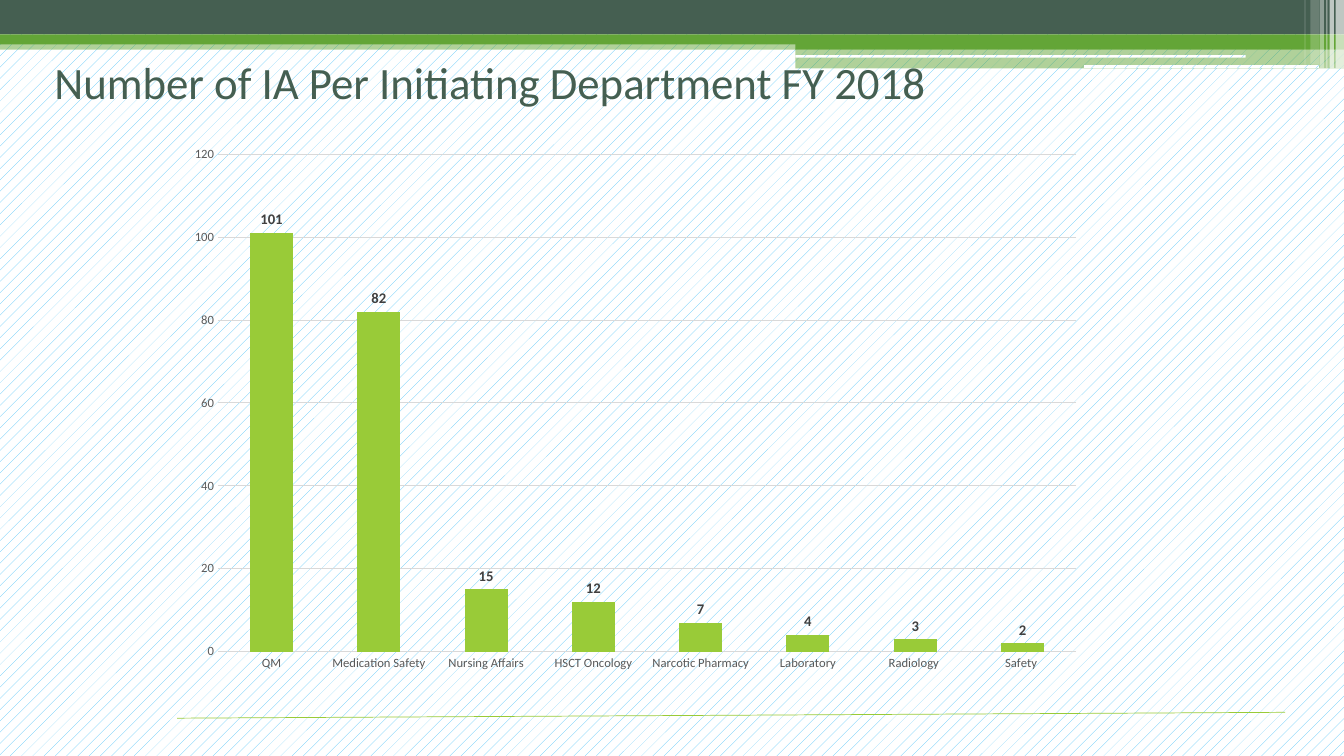
from lxml import etree
from pptx import Presentation
from pptx.chart.data import CategoryChartData
from pptx.dml.color import RGBColor
from pptx.enum.chart import XL_CHART_TYPE, XL_LABEL_POSITION, XL_TICK_MARK
from pptx.enum.dml import MSO_PATTERN
from pptx.enum.shapes import MSO_CONNECTOR, MSO_SHAPE
from pptx.enum.text import MSO_ANCHOR, PP_ALIGN
from pptx.oxml.ns import qn
from pptx.util import Inches, Pt

RECTANGLE = MSO_SHAPE.RECTANGLE
ROUNDED = MSO_SHAPE.ROUNDED_RECTANGLE
STRAIGHT = MSO_CONNECTOR.STRAIGHT
DOTS = MSO_PATTERN.PERCENT_10
COLUMNS = XL_CHART_TYPE.COLUMN_CLUSTERED
ABOVE_BAR = XL_LABEL_POSITION.OUTSIDE_END
NO_TICK = XL_TICK_MARK.NONE
LEFT = PP_ALIGN.LEFT
TOP = MSO_ANCHOR.TOP

GRID_COLUMNS, GRID_ROWS = 160, 90
PINE, GREEN, LIME, SKY, WHITE = "455F51", "63A537", "99CB38", "51C3F9", "FFFFFF"

# left, top, width, height in grid cells, then colour and opacity in percent
BANDS = [
    (0, 4.8, 160, 1.1, GREEN, 50),
    (0, 0, 160, 4.1, PINE, 100),
    (0, 4.1, 160, 1.2, GREEN, 100),
    (94.7, 4.7, 65.3, 1.2, GREEN, 100),
    (94.7, 5.8, 65.3, 2.36, GREEN, 50),
]
NOTCHES = [(94.7, 6.5, 53.6, 0.36), (129, 7.7, 28, 0.45)]
# left, width, height in grid cells, then opacity in percent
STRIPES = [
    (159, 1, 8.16, 65),
    (158.3, 0.5, 8.16, 65),
    (157.9, 0.12, 8.16, 60),
    (157.1, 0.5, 8.16, 40),
    (156, 1, 7.7, 20),
    (155.3, 0.12, 7.7, 30),
]
INITIATIVES = {
    "QM": 101,
    "Medication Safety": 82,
    "Nursing Affairs": 15,
    "HSCT Oncology": 12,
    "Narcotic Pharmacy": 7,
    "Laboratory": 4,
    "Radiology ": 3,
    "Safety ": 2,
}


def colour(value):
    return RGBColor.from_string(value)


class SlideBuilder:
    font_name = "Calibri"

    def __init__(self, deck):
        self.slide = deck.slides.add_slide(deck.slide_layouts[6])
        self.column = deck.slide_width / GRID_COLUMNS
        self.row = deck.slide_height / GRID_ROWS

    def cells(self, left, top, width, height):
        """Turn grid cells into slide lengths."""
        return (round(left * self.column), round(top * self.row),
                round(width * self.column), round(height * self.row))

    def style_font(self, font, hex_colour, **values):
        for name, value in {"name": self.font_name, **values}.items():
            setattr(font, name, value)
        font.color.rgb = colour(hex_colour)

    def dotted_fill(self, fill):
        fill.patterned()
        fill.pattern = DOTS
        fill.fore_color.rgb = colour(SKY)
        fill.back_color.rgb = colour(WHITE)

    def background(self):
        self.dotted_fill(self.slide.background.fill)

    def shape(self, kind, place):
        shape = self.slide.shapes.add_shape(kind, *self.cells(*place))
        shape.shadow.inherit = False
        shape.line.fill.background()
        return shape

    def band(self, place, hex_colour, opacity):
        band = self.shape(RECTANGLE, place)
        band.fill.solid()
        band.fill.fore_color.rgb = colour(hex_colour)
        if opacity < 100:
            solid = band.fill._xPr.find(qn("a:solidFill"))
            etree.SubElement(solid[0], qn("a:alpha"), val=str(opacity * 1000))

    def notch(self, place):
        self.dotted_fill(self.shape(ROUNDED, place).fill)

    def line(self, start, end, hex_colour, points):
        ends = self.cells(*start, *end)
        line = self.slide.shapes.add_connector(STRAIGHT, *ends)
        line.line.color.rgb = colour(hex_colour)
        line.line.width = Pt(points)
        etree.SubElement(line._element.spPr, qn("a:effectLst"))

    def title(self, place, text):
        box = self.slide.shapes.add_textbox(*self.cells(*place))
        frame = box.text_frame
        for name, value in {"word_wrap": True, "vertical_anchor": TOP}.items():
            setattr(frame, name, value)
        para = frame.paragraphs[0]
        para.alignment = LEFT
        span = para.add_run()
        span.text = text
        self.style_font(span.font, PINE, size=Pt(32))

    def column_chart(self, place, values):
        data = CategoryChartData()
        data.categories = list(values)
        data.add_series("Series 1", list(values.values()))
        frame = self.slide.shapes.add_chart(COLUMNS, *self.cells(*place), data)
        chart = frame.chart
        chart.has_title = chart.has_legend = False
        self.style_font(chart.font, "000000", size=Pt(10))
        for axis in (chart.category_axis, chart.value_axis):
            axis.major_tick_mark = axis.minor_tick_mark = NO_TICK
            axis.format.line.fill.background()
            self.style_font(axis.tick_labels.font, "595959", size=Pt(9))
        scale = {"minimum_scale": 0, "maximum_scale": 120, "major_unit": 20}
        for name, value in scale.items():
            setattr(chart.value_axis, name, value)
        grid_line = chart.value_axis.major_gridlines.format.line
        grid_line.color.rgb = colour("D9D9D9")
        grid_line.width = Pt(0.75)
        plot = chart.plots[0]
        plot.vary_by_categories = False
        plot.gap_width = 150
        bars = plot.series[0]
        bars.format.fill.solid()
        bars.format.fill.fore_color.rgb = colour(LIME)
        labels = bars.data_labels
        labels.show_value = True
        labels.position = ABOVE_BAR
        self.style_font(labels.font, "404040", size=Pt(10.5), bold=True)


def main():
    deck = Presentation()
    deck.slide_width, deck.slide_height = Inches(13.33), Inches(7.5)
    page = SlideBuilder(deck)
    page.background()
    for *place, hex_colour, opacity in BANDS:
        page.band(place, hex_colour, opacity)
    for place in NOTCHES:
        page.notch(place)
    for left, width, height, opacity in STRIPES:
        page.band((left, 0, width, height), WHITE, opacity)
    page.line((21.1, 85.5), (153, 84.8), LIME, 0.5)
    page.title((5.3, 5.9, 136.4, 15.1), "Number of IA Per Initiating Department FY 2018")
    page.column_chart((21, 16.2, 109.3, 64.9), INITIATIVES)
    deck.save("out.pptx")


if __name__ == "__main__":
    main()
